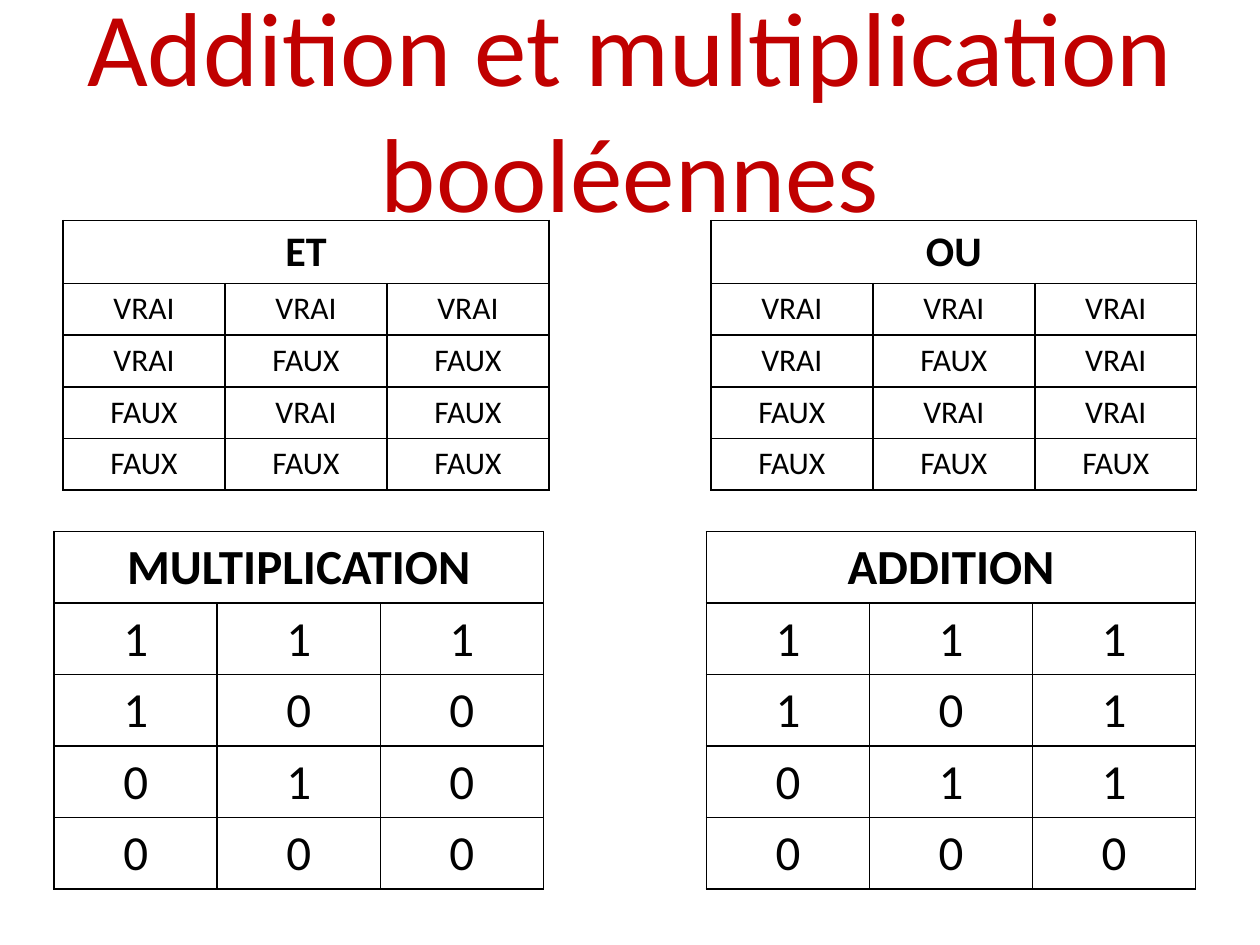
from itertools import product

from lxml import etree
from pptx import Presentation
from pptx import util as u
from pptx.dml.color import RGBColor
from pptx.enum import text
from pptx.oxml.ns import qn

WIDE, HIGH = 10, 7.5
COLS, ROWS, GAP = 7, 5, 3
HUES = {"title": "C00000", "ink": "000000"}
BITS = list(product((1, 0), repeat=2))


def style(run, hue, **looks):
    """Set the font of a run from format values."""
    for key, val in {"name": "Calibri", **looks}.items():
        setattr(run.font, key, val)
    run.font.color.rgb = RGBColor.from_string(HUES[hue])


def write(frame, words, hue, **looks):
    """Write one centred paragraph."""
    para = frame.paragraphs[0]
    para.alignment = text.PP_ALIGN.CENTER
    run = para.add_run()
    run.text = words
    style(run, hue, **looks)


def edge(cell, sides):
    """Draw the named sides of a cell and clear the others."""
    props = cell._tc.get_or_add_tcPr()
    for spot, side in enumerate("LRTB"):
        line = etree.Element(qn(f"a:ln{side}"), w=str(u.Pt(1)))
        if side in sides:
            fill = etree.SubElement(line, qn("a:solidFill"))
            etree.SubElement(fill, qn("a:srgbClr"), val=HUES["ink"])
        else:
            etree.SubElement(line, qn("a:noFill"))
        props.insert(spot, line)


def add_title(slide, words):
    box = slide.shapes.add_textbox(0, 0, u.Inches(WIDE), u.Inches(1.7))
    frame = box.text_frame
    frame.word_wrap = True
    frame.vertical_anchor = text.MSO_ANCHOR.MIDDLE
    write(frame, words, "title", size=u.Pt(60))


def add_truth(slide, left, top, width, row, heads, names, sizes, anchor):
    """Add the AND and OR tables side by side, split by an empty column."""
    grid = slide.shapes.add_table(
        ROWS, COLS, *(u.Inches(n) for n in (left, top, width, row * ROWS))).table
    for flag in ("first_row", "horz_banding"):
        setattr(grid, flag, False)

    # Plain cells; the gap column keeps only its sides
    for r, c in product(range(ROWS), range(COLS)):
        cell = grid.cell(r, c)
        cell.fill.background()
        edge(cell, "LR" if c == GAP else "LRTB")
    grid.cell(0, GAP).merge(grid.cell(ROWS - 1, GAP))

    # Heading, then one row for each pair of values
    for start, head, rule in zip((0, GAP + 1), heads, (min, max)):
        top_cell = grid.cell(0, start)
        top_cell.merge(grid.cell(0, start + 2))
        write(top_cell.text_frame, head, "ink", size=u.Pt(sizes[0]), bold=True)
        for r, pair in enumerate(BITS, 1):
            for c, bit in enumerate((*pair, rule(pair)), start):
                cell = grid.cell(r, c)
                cell.vertical_anchor = anchor
                write(cell.text_frame, names[bit], "ink",
                      size=u.Pt(sizes[1]), bold=False)


def main():
    deck = Presentation()
    deck.slide_width, deck.slide_height = u.Inches(WIDE), u.Inches(HIGH)
    slide = deck.slides.add_slide(deck.slide_layouts[6])

    add_title(slide, "Addition et multiplication booléennes")
    # Logic words
    add_truth(slide, 0.05 * WIDE, 1.75, 0.9 * WIDE, 0.41, ("ET", "OU"),
              ("FAUX", "VRAI"), (24, 18), text.MSO_ANCHOR.TOP)
    # Binary digits
    add_truth(slide, 0.43, 4.22, 9.06, 0.55, ("MULTIPLICATION", "ADDITION"),
              ("0", "1"), (28, 28), text.MSO_ANCHOR.MIDDLE)
    deck.save("out.pptx")


if __name__ == "__main__":
    main()
